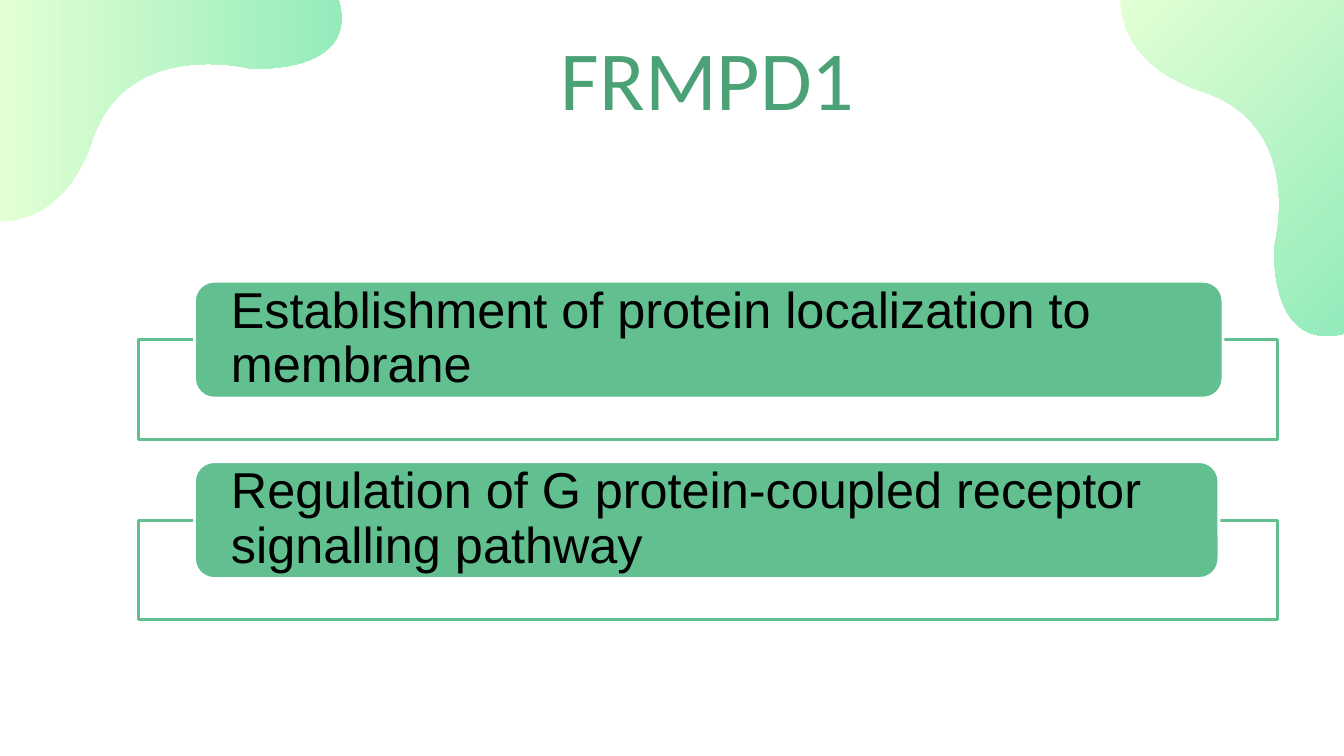
from lxml import etree
from pptx import Presentation
from pptx.dml.color import RGBColor
from pptx.enum.shapes import MSO_SHAPE
from pptx.enum.text import MSO_ANCHOR, PP_ALIGN
from pptx.oxml.ns import qn
from pptx.util import Inches, Pt

RECT = MSO_SHAPE.RECTANGLE
ROUND = MSO_SHAPE.ROUNDED_RECTANGLE
MIDDLE = MSO_ANCHOR.MIDDLE
LEFT = PP_ALIGN.LEFT
CENTER = PP_ALIGN.CENTER

WHITE = RGBColor(0xFF, 0xFF, 0xFF)
BLACK = RGBColor(0, 0, 0)
GREEN = RGBColor(0x62, 0xC0, 0x90)
DEEP = RGBColor(0x4A, 0xA2, 0x76)
PALE = RGBColor(0xE3, 0xFF, 0xD5)
MINT = RGBColor(0x90, 0xEB, 0xBA)

LEFT_BLOB = [
    (0, 2.2),
    (0.26, 2.19), (0.69, 2.07), (0.92, 1.38),
    (1.27, 0.37), (2.48, 0.68), (2.48, 0.68),
    (2.48, 0.68), (3.57, 0.75), (3.36, 0),
    (0, 0),
]
RIGHT_BLOB = [
    (0, 0),
    (0.01, 0.25), (0.13, 0.68), (0.82, 0.91),
    (1.85, 1.25), (1.53, 2.44), (1.53, 2.44),
    (1.53, 2.44), (1.46, 3.5), (2.22, 3.31),
    (2.22, 0),
]
ITEMS = [
    ("Establishment of protein localization to membrane", 10.2),
    ("Regulation of G protein-coupled receptor signalling pathway", 10.16),
]


def bend(shape):
    lines = list(shape._element.iter(qn("a:lnTo")))
    for i in range(0, 9, 3):
        arc = etree.Element(qn("a:cubicBezTo"))
        lines[i].addprevious(arc)
        for line in lines[i:i + 3]:
            arc.append(line[0])
            line.getparent().remove(line)


def add_blob(slide, x, y, points, angle):
    spots = [(Inches(x + px), Inches(y + py)) for px, py in points]
    pen = slide.shapes.build_freeform(*spots[0])
    pen.add_line_segments(spots[1:], close=True)
    blob = pen.convert_to_shape()
    bend(blob)
    blob.shadow.inherit = False
    blob.line.fill.background()
    blob.fill.gradient()
    blob.fill.gradient_angle = angle
    for stop, color, place in zip(blob.fill.gradient_stops, (PALE, MINT), (0, 1)):
        stop.color.rgb = color
        stop.position = place


def add_text(slide, x, y, w, h, text, size, font, color,
             align=LEFT, pad=(0.1, 0.1), space=None):
    box = slide.shapes.add_textbox(Inches(x), Inches(y), Inches(w), Inches(h))
    frame = box.text_frame
    frame.word_wrap = True
    frame.vertical_anchor = MIDDLE
    frame.margin_left = frame.margin_right = Inches(pad[0])
    frame.margin_top = frame.margin_bottom = Inches(pad[1])
    para = frame.paragraphs[0]
    para.alignment = align
    para.line_spacing = space
    run = para.add_run()
    run.text = text
    run.font.size = Pt(size)
    run.font.name = font
    run.font.color.rgb = color


def add_box(slide, kind, x, y, w, h, fill, line):
    box = slide.shapes.add_shape(kind, Inches(x), Inches(y), Inches(w), Inches(h))
    box.shadow.inherit = False
    box.fill.solid()
    box.fill.fore_color.rgb = fill
    box.line.color.rgb = line
    box.line.width = Pt(2)
    return box


def add_title(slide, x, y, w, h):
    add_text(slide, x, y, w, h, "FRMPD1", 60, "Calibri", DEEP, align=CENTER)


def add_item(slide, x, y, w, text, width):
    frame = add_box(slide, RECT, x, y + 0.58, w, 0.99, WHITE, GREEN)
    tint = frame.fill._xPr.find(qn("a:solidFill"))[0]
    etree.SubElement(tint, qn("a:alpha")).set("val", "90000")
    add_box(slide, ROUND, x + 0.56, y, width, 1.16, GREEN, WHITE)
    add_text(slide, x + 0.62, y + 0.05, width - 0.11, 1.05, text, 36, "Arial",
             BLACK, pad=(0.3, 0), space=0.9)


def add_list(slide, x, y, w, pitch):
    for i, (text, width) in enumerate(ITEMS):
        add_item(slide, x, y + i * pitch, w, text, width)


def main():
    deck = Presentation()
    deck.slide_width = Inches(13.33)
    deck.slide_height = Inches(7.5)
    slide = deck.slides.add_slide(deck.slide_layouts[6])
    add_blob(slide, 0, 0, LEFT_BLOB, 0)
    add_blob(slide, 11.11, 0, RIGHT_BLOB, 315)
    add_title(slide, 4.93, 0.23, 4.18, 1.06)
    add_list(slide, 1.37, 2.79, 11.3, 1.79)
    deck.save("out.pptx")


if __name__ == "__main__":
    main()
